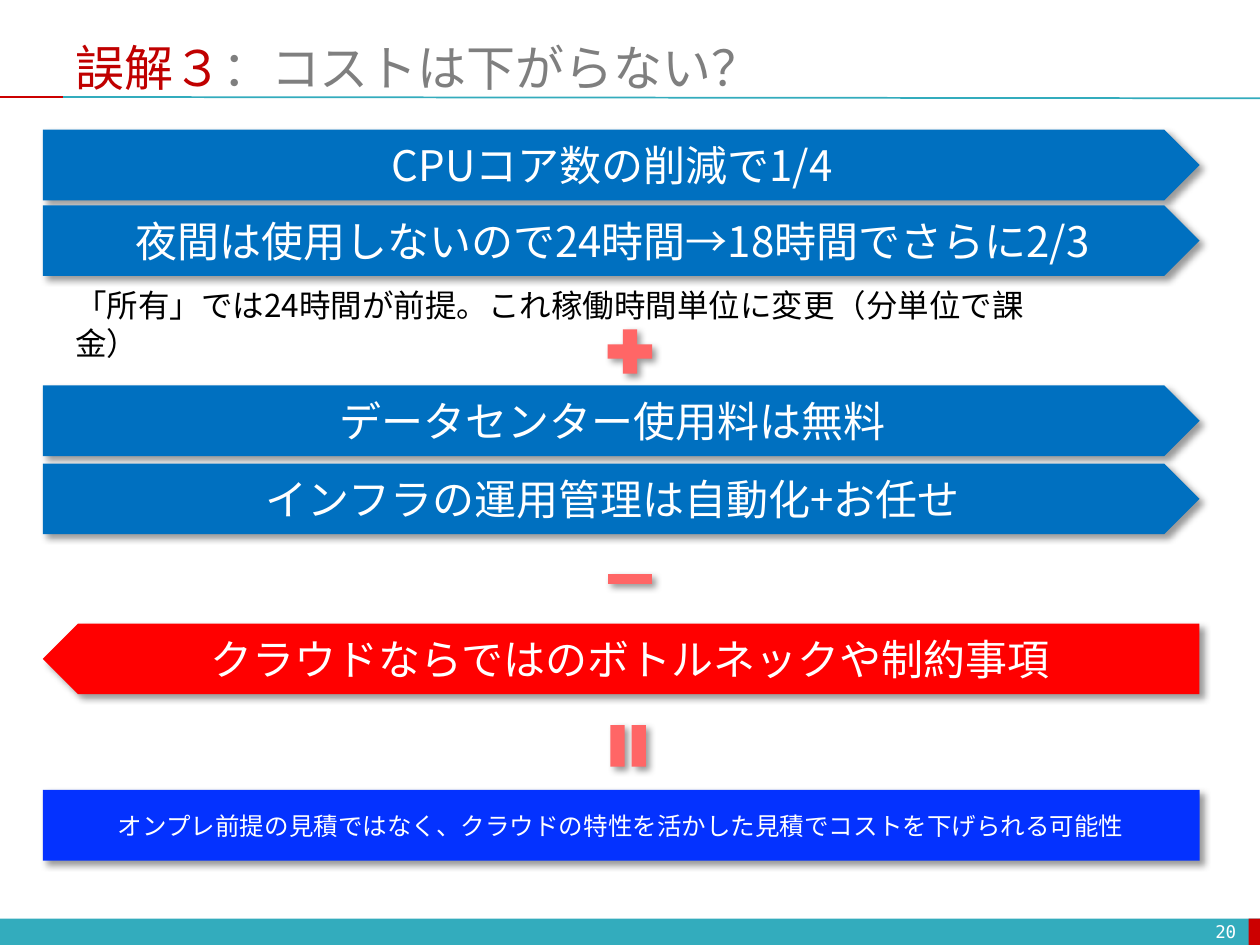
from dataclasses import dataclass

from lxml import etree
from pptx import Presentation
from pptx.dml.color import RGBColor
from pptx.enum.shapes import MSO_CONNECTOR, MSO_SHAPE
from pptx.enum.text import MSO_ANCHOR, PP_ALIGN
from pptx.oxml.ns import qn
from pptx.util import Inches, Pt

RECTANGLE = MSO_SHAPE.RECTANGLE
ROUNDED = MSO_SHAPE.ROUNDED_RECTANGLE
PENTAGON = MSO_SHAPE.PENTAGON
PLUS, MINUS, EQUAL = MSO_SHAPE.MATH_PLUS, MSO_SHAPE.MATH_MINUS, MSO_SHAPE.MATH_EQUAL
STRAIGHT = MSO_CONNECTOR.STRAIGHT
MIDDLE, TOP = MSO_ANCHOR.MIDDLE, MSO_ANCHOR.TOP
LEFT, CENTER, RIGHT = PP_ALIGN.LEFT, PP_ALIGN.CENTER, PP_ALIGN.RIGHT


@dataclass(frozen=True)
class Theme:
    teal: str = "33ACBD"
    accent: str = "CC0000"
    title_red: str = "C00000"
    title_grey: str = "7F7F7F"
    benefit: str = "0070C0"
    drawback: str = "FF0000"
    conclusion: str = "0432FF"
    operator: str = "FF6666"
    white: str = "FFFFFF"
    black: str = "000000"
    body_font: str = "Noto Sans CJK JP"
    title_font: str = "Calibri"
    number_font: str = "DejaVu Sans Mono"
    title_size: int = 28
    banner_size: int = 24
    note_size: int = 18
    conclusion_size: int = 14
    number_size: int = 10


THEME = Theme()
BANNER_LEFT, BANNER_WIDTH, BANNER_HEIGHT = 0.34, 9.18, 0.56
OPERATOR_LEFT, OPERATOR_SIZE = 4.76, 0.48


def write(shape, runs, size, font=THEME.body_font, align=LEFT, anchor=MIDDLE):
    """Fill one paragraph from (text, colour) pairs."""
    frame = shape.text_frame
    frame.word_wrap = True
    frame.vertical_anchor = anchor
    paragraph = frame.paragraphs[0]
    paragraph.alignment = align
    for text, color in runs:
        run = paragraph.add_run()
        run.text = text
        run.font.size = Pt(size)
        run.font.name = font
        run.font.color.rgb = RGBColor.from_string(color)
        east_asian = etree.SubElement(run._r.get_or_add_rPr(), qn("a:ea"))
        east_asian.set("typeface", THEME.body_font)


def add_text(slide, box, runs, size, **options):
    shape = slide.shapes.add_textbox(*map(Inches, box))
    write(shape, runs, size, **options)
    return shape


def add_block(slide, kind, box, color):
    shape = slide.shapes.add_shape(kind, *map(Inches, box))
    shape.shadow.inherit = False
    shape.fill.solid()
    shape.fill.fore_color.rgb = RGBColor.from_string(color)
    shape.line.fill.background()
    return shape


def add_shadow(shape):
    effects = shape._element.spPr.find(qn("a:effectLst"))
    shadow = etree.SubElement(
        effects, qn("a:outerShdw"), blurRad=str(Pt(4)), dist=str(Pt(3)),
        dir=str(45 * 60000), algn="tl", rotWithShape="0")
    color = etree.SubElement(shadow, qn("a:srgbClr"), val=THEME.black)
    etree.SubElement(color, qn("a:alpha"), val="40000")


def add_banner(slide, kind, top, text, color, size=THEME.banner_size):
    box = (BANNER_LEFT, top, BANNER_WIDTH, BANNER_HEIGHT)
    shape = add_block(slide, kind, box, color)
    add_shadow(shape)
    write(shape, [(text, THEME.white)], size, align=CENTER)
    return shape


def add_operator(slide, kind, top, width=OPERATOR_SIZE, height=OPERATOR_SIZE):
    shape = add_block(slide, kind, (OPERATOR_LEFT, top, width, height), THEME.operator)
    add_shadow(shape)
    return shape


def add_rule(slide, start, end, color):
    line = slide.shapes.add_connector(STRAIGHT, *map(Inches, start + end))
    line.line.color.rgb = RGBColor.from_string(color)
    line.line.width = Pt(1)
    etree.SubElement(line._element.spPr, qn("a:effectLst"))


def add_frame(slide):
    # Footer band and page number
    add_block(slide, RECTANGLE, (0, 7.29, 10, 0.22), THEME.teal)
    add_block(slide, RECTANGLE, (9.91, 7.29, 0.1, 0.22), THEME.accent)
    add_text(slide, (7.58, 7.27, 2.33, 0.24), [("20", THEME.white)],
             THEME.number_size, font=THEME.number_font, align=RIGHT)
    # Title and its underline
    add_rule(slide, (0.5, 0.77), (10, 0.78), THEME.teal)
    add_rule(slide, (0, 0.77), (0.5, 0.77), THEME.accent)
    add_text(slide, (0.5, 0.3, 9.5, 0.46),
             [("誤解３", THEME.title_red), ("：コストは下がらない？", THEME.title_grey)],
             THEME.title_size, font=THEME.title_font)


def main():
    presentation = Presentation()
    presentation.slide_width, presentation.slide_height = Inches(10), Inches(7.5)
    slide = presentation.slides.add_slide(presentation.slide_layouts[6])
    add_frame(slide)

    # Cost benefits
    benefits = [
        (1.03, "CPUコア数の削減で1/4"),
        (1.63, "夜間は使用しないので24時間→18時間でさらに2/3"),
        (3.06, "データセンター使用料は無料"),
        (3.68, "インフラの運用管理は自動化+お任せ"),
    ]
    for top, text in benefits:
        add_banner(slide, PENTAGON, top, text, THEME.benefit)
    note = add_text(
        slide, (0.5, 2.22, 8.59, 0.4),
        [("「所有」では24時間が前提。これ稼働時間単位に変更（分単位で課金）", THEME.black)],
        THEME.note_size, anchor=TOP)
    note.text_frame.margin_right = Inches(0.5)
    add_operator(slide, PLUS, 2.55)

    # Drawbacks, pointing the other way
    add_operator(slide, MINUS, 4.42, height=0.35)
    drawback = add_banner(slide, PENTAGON, 4.95,
                          "クラウドならではのボトルネックや制約事項", THEME.drawback)
    drawback._element.spPr.find(qn("a:xfrm")).set("flipH", "1")

    # Conclusion
    add_operator(slide, EQUAL, 5.68, width=0.45).rotation = 90
    conclusion = add_banner(
        slide, ROUNDED, 6.27,
        "オンプレ前提の見積ではなく、クラウドの特性を活かした見積でコストを下げられる可能性",
        THEME.conclusion, THEME.conclusion_size)
    conclusion.adjustments[0] = 0

    presentation.save("out.pptx")


if __name__ == "__main__":
    main()
